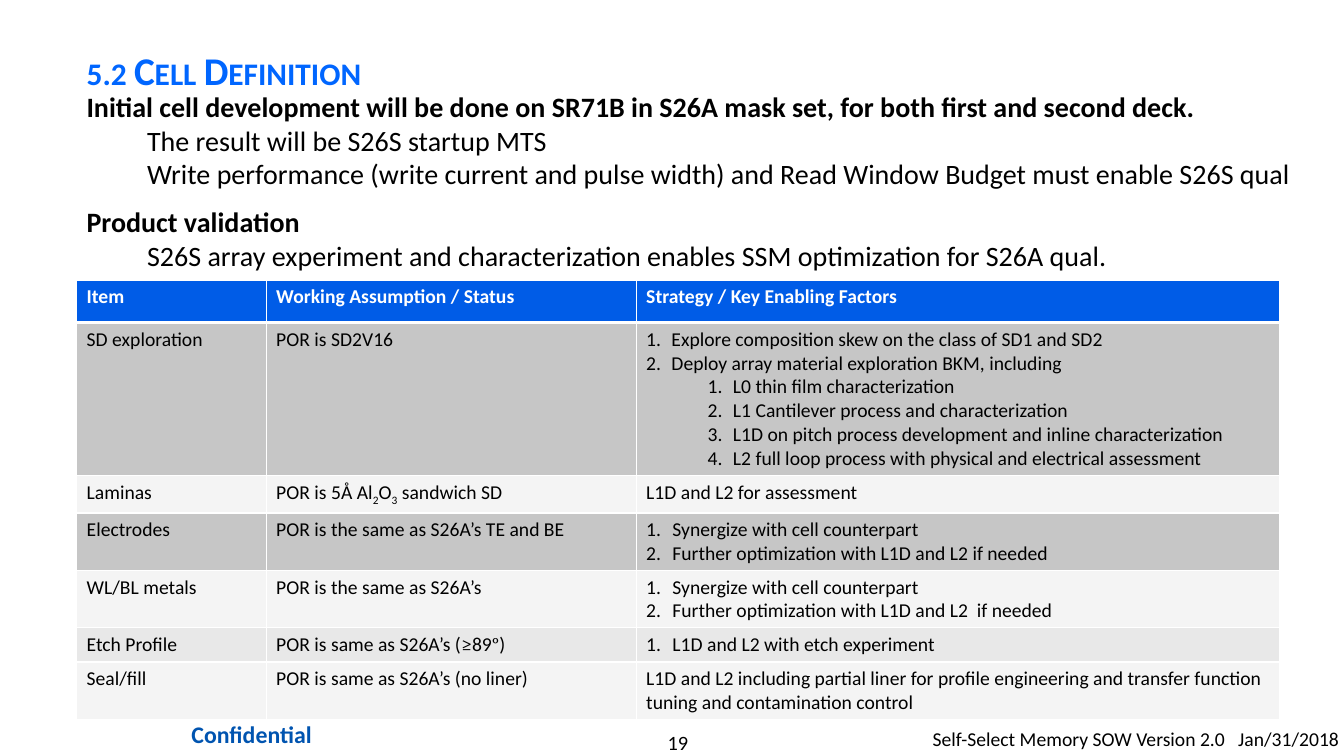
from dataclasses import dataclass, field

from lxml.etree import SubElement
from pptx import Presentation
from pptx.dml.color import RGBColor
from pptx.enum.text import MSO_ANCHOR, PP_ALIGN
from pptx.oxml.ns import qn
from pptx.util import Inches, Pt

BLACK = RGBColor(0x00, 0x00, 0x00)
WHITE = RGBColor(0xFF, 0xFF, 0xFF)
TITLE_BLUE = RGBColor(0x00, 0x66, 0xFF)
HEADER_BLUE = RGBColor(0x00, 0x5C, 0xE7)
FOOTER_BLUE = RGBColor(0x00, 0x54, 0xB0)
DARK_GREY = RGBColor(0xC6, 0xC6, 0xC6)
MID_GREY = RGBColor(0xE8, 0xE8, 0xE8)
LIGHT_GREY = RGBColor(0xF4, 0xF4, 0xF4)


@dataclass
class Run:
    text: str
    font: str = "Calibri"
    subscript: bool = False


@dataclass
class Para:
    runs: list[Run]
    level: int = 0
    margin: float = 0
    hanging: float = 0
    numbered: bool = False
    format: dict = field(default_factory=dict)


@dataclass
class Label:
    text: str
    box: tuple[float, float, float, float]
    insets: tuple[float, float]
    size: float
    color: RGBColor = BLACK
    bold: bool = False
    align: PP_ALIGN = PP_ALIGN.LEFT


@dataclass
class Row:
    height: float
    fill: RGBColor
    cells: list[list[Para]]


def plain(text: str) -> list[Para]:
    return [Para([Run(text)])]


def steps(*texts: str, level: int = 0, margin: float = 0.26, hanging: float = 0.26) -> list[Para]:
    return [Para([Run(t)], level, margin, hanging, True) for t in texts]


def detail(text: str) -> Para:
    return Para([Run(text)], 1, 1.21, 0.61)


LABELS = [
    Label("19", (5.56, 7.24, 2.33, 0.24), (0, 0), 14.5, align=PP_ALIGN.CENTER),
    Label("Confidential", (1.55, 7.08, 1.89, 0.41), (0.12, 0.06), 17,
          FOOTER_BLUE, True, PP_ALIGN.CENTER),
    Label("Self-Select Memory SOW Version 2.0   Jan/31/2018",
          (9.25, 7.16, 4.08, 0.34), (0, 0.05), 14),
]

BODY = [
    Para([Run("Initial cell development will be done on SR71B in S26A mask set, "
              "for both first and second deck.")]),
    detail("The result will be S26S startup MTS"),
    detail("Write performance (write current and pulse width) and Read Window Budget "
           "must enable S26S qual"),
    Para([Run("Product validation")], format={"space_before": Pt(10)}),
    detail("S26S array experiment and characterization enables SSM optimization for S26A qual."),
]

COLUMNS = [1.88, 3.67, 6.38]
ROWS = [
    Row(0.42, HEADER_BLUE, [plain("Item"), plain("Working Assumption / Status"),
                            plain("Strategy / Key Enabling Factors")]),
    Row(1.52, DARK_GREY, [
        plain("SD exploration"), plain("POR is SD2V16"),
        steps("Explore composition skew on the class of SD1 and SD2",
              "Deploy array material exploration BKM, including", margin=0.25, hanging=0.25)
        + steps("L0 thin film characterization",
                "L1 Cantilever process and characterization",
                "L1D on pitch process development and inline characterization",
                "L2 full loop process with physical and electrical assessment",
                level=1, margin=0.86, hanging=0.25)]),
    Row(0.37, LIGHT_GREY, [
        plain("Laminas"),
        [Para([Run("POR is 5Å Al"), Run("2", subscript=True), Run("O"),
               Run("3", subscript=True), Run(" sandwich SD")])],
        plain("L1D and L2 for assessment")]),
    Row(0.57, DARK_GREY, [
        plain("Electrodes"), plain("POR is the same as S26A’s TE and BE"),
        steps("Synergize with cell counterpart",
              "Further optimization with L1D and L2 if needed")]),
    Row(0.57, LIGHT_GREY, [
        plain("WL/BL metals"), plain("POR is the same as S26A’s"),
        steps("Synergize with cell counterpart",
              "Further optimization with L1D and L2  if needed")]),
    Row(0.34, MID_GREY, [
        plain("Etch Profile"),
        [Para([Run("POR is same as S26A’s ("), Run("≥", "Cambria"), Run("89"),
               Run("°", "Cambria"), Run(")")])],
        steps("L1D and L2 with etch experiment")]),
    Row(0.57, LIGHT_GREY, [
        plain("Seal/fill"), plain("POR is same as S26A’s (no liner)"),
        plain("L1D and L2 including partial liner for profile engineering and transfer "
              "function tuning and contamination control")]),
]


def apply(target, values: dict) -> None:
    for name, value in values.items():
        setattr(target, name, value)


def place(shape, box: tuple) -> None:
    apply(shape, dict(zip(("left", "top", "width", "height"), map(Inches, box))))


def set_insets(tf, x: float, y: float) -> None:
    apply(tf, {"margin_left": Inches(x), "margin_right": Inches(x),
               "margin_top": Inches(y), "margin_bottom": Inches(y)})


def write(tf, paras: list[Para], size: float, color: RGBColor, bold_levels: tuple = ()) -> None:
    """Fill a text frame; paragraphs on bold_levels are bold."""
    for i, para in enumerate(paras):
        p = tf.paragraphs[0] if i == 0 else tf.add_paragraph()
        apply(p, {"level": para.level, **para.format})
        if para.margin:
            pPr = p._p.get_or_add_pPr()
            pPr.set("marL", str(Inches(para.margin)))
            pPr.set("indent", str(-Inches(para.hanging)))
            if para.numbered:
                SubElement(pPr, qn("a:buAutoNum"), type="arabicPeriod")
        for run in para.runs:
            r = p.add_run()
            r.text = run.text
            apply(r.font, {"name": run.font, "size": Pt(size), "bold": para.level in bold_levels})
            r.font.color.rgb = color
            if run.subscript:
                r.font._element.set("baseline", "-25000")


def add_text(s, box: tuple, insets: tuple):
    tf = s.shapes.add_textbox(*map(Inches, box)).text_frame
    tf.word_wrap = True
    set_insets(tf, *insets)
    return tf


def set_borders(cell, top: float, bottom: float) -> None:
    tcPr = cell._tc.get_or_add_tcPr()
    for i, (side, width) in enumerate({"L": 1, "R": 1, "T": top, "B": bottom}.items()):
        ln = SubElement(tcPr, qn(f"a:ln{side}"), w=str(Pt(width)))
        SubElement(SubElement(ln, qn("a:solidFill")), qn("a:srgbClr"), val=str(WHITE))
        tcPr.insert(i, ln)


def add_title(s) -> None:
    title = s.shapes.title
    place(title, (0.76, 0.21, 11.06, 0.92))
    tf = title.text_frame
    apply(tf, {"vertical_anchor": MSO_ANCHOR.MIDDLE, "word_wrap": True})
    set_insets(tf, 0.1, 0.05)
    heading = Para([Run("5.2 Cell Definition")],
                   format={"alignment": PP_ALIGN.LEFT, "line_spacing": 1.1})
    write(tf, [heading], 28, TITLE_BLUE, (0,))
    tf.paragraphs[0].runs[0].font._element.set("cap", "small")


def add_cell_table(s) -> None:
    height = sum(row.height for row in ROWS)
    table = s.shapes.add_table(len(ROWS), len(COLUMNS), Inches(0.76), Inches(2.78),
                               Inches(sum(COLUMNS)), Inches(height)).table
    table.horz_banding = False
    for column, width in zip(table.columns, COLUMNS):
        column.width = Inches(width)
    for i, row in enumerate(ROWS):
        table.rows[i].height = Inches(row.height)
        for j, paras in enumerate(row.cells):
            cell = table.cell(i, j)
            cell.fill.solid()
            cell.fill.fore_color.rgb = row.fill
            set_borders(cell, top=3 if i == 1 else 1, bottom=3 if i == 0 else 1)
            write(cell.text_frame, paras, 14, BLACK if i else WHITE, () if i else (0,))


def main() -> None:
    prs = Presentation()
    apply(prs, {"slide_width": Inches(13.33), "slide_height": Inches(7.5)})
    s = prs.slides.add_slide(prs.slide_layouts[5])
    for label in LABELS:
        tf = add_text(s, label.box, label.insets)
        para = Para([Run(label.text)], format={"alignment": label.align})
        write(tf, [para], label.size, label.color, (0,) if label.bold else ())
    add_title(s)
    write(add_text(s, (0.76, 0.84, 12.28, 1.96), (0.1, 0.05)), BODY, 20, BLACK, (0,))
    add_cell_table(s)
    prs.save("out.pptx")


if __name__ == "__main__":
    main()
